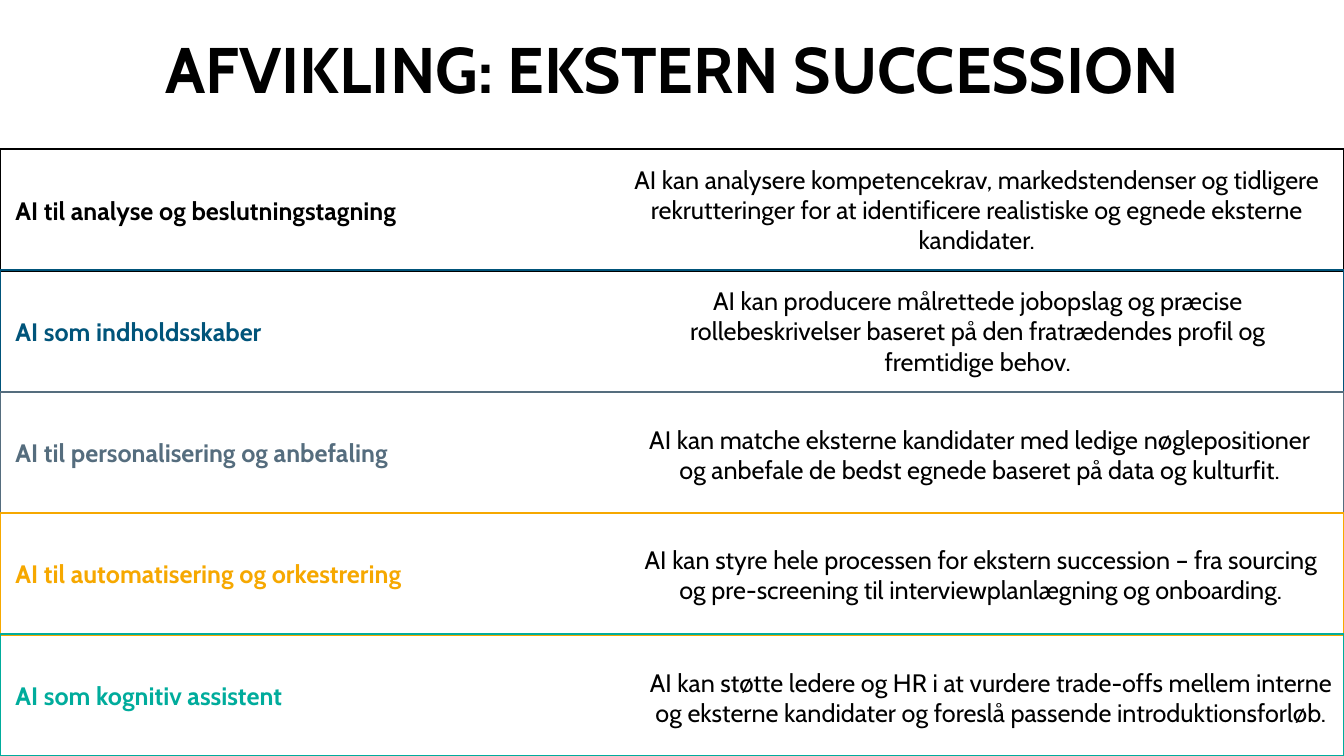
from pptx import Presentation
from pptx.dml.color import RGBColor
from pptx.enum.shapes import MSO_SHAPE as Geo
from pptx.enum.text import MSO_ANCHOR as Anchor, PP_ALIGN as Align
from pptx.util import Pt

WIDE, HIGH = 960, 540
TOP, STEP, TALL = 106.5, 86.6, 87

# Colour, label, text, left and drop of the text within its row
ROWS = [
    ("000000", "AI til analyse og beslutningstagning",
     "AI kan analysere kompetencekrav, markedstendenser og tidligere "
     "rekrutteringer for at identificere realistiske og egnede eksterne "
     "kandidater.", 445.7, 0),
    ("00547A", "AI som indholdsskaber",
     "AI kan producere målrettede jobopslag og præcise rollebeskrivelser "
     "baseret på den fratrædendes profil og fremtidige behov.", 446.4, 0),
    ("556D7E", "AI til personalisering og anbefaling",
     "AI kan matche eksterne kandidater med ledige nøglepositioner og "
     "anbefale de bedst egnede baseret på data og kulturfit.", 447.8, 1.8),
    ("F6A800", "AI til automatisering og orkestrering",
     "AI kan styre hele processen for ekstern succession – fra sourcing og "
     "pre-screening til interviewplanlægning og onboarding.", 448.6, 1),
    ("00AC9C", "AI som kognitiv assistent",
     "AI kan støtte ledere og HR i at vurdere trade-offs mellem interne og "
     "eksterne kandidater og foreslå passende introduktionsforløb.",
     455.8, 2.1),
]


def paint(code):
    return RGBColor.from_string(code)


class Page:
    face = "Cabin"
    ink = "000000"
    size = 18

    def __init__(self, deck):
        self.slide = deck.slides.add_slide(deck.slide_layouts[6])

    def label(self, shape, words, size, color, bold, align):
        frame = shape.text_frame
        frame.word_wrap = True
        frame.vertical_anchor = Anchor.MIDDLE
        para = frame.paragraphs[0]
        para.text = words
        para.alignment = align
        font = para.font
        font.name, font.size, font.bold = self.face, Pt(size), bold
        font.color.rgb = paint(color)

    def text(self, words, x, y, w, h, size=size, bold=False):
        box = self.slide.shapes.add_textbox(Pt(x), Pt(y), Pt(w), Pt(h))
        self.label(box, words, size, self.ink, bold, Align.CENTER)

    def band(self, words, y, color):
        box = self.slide.shapes.add_shape(
            Geo.RECTANGLE, Pt(0), Pt(y), Pt(WIDE), Pt(TALL))
        box.shadow.inherit = False
        box.fill.background()
        box.line.color.rgb = paint(color)
        box.line.width = Pt(1.5)
        box.text_frame.margin_left = Pt(11)
        self.label(box, words, self.size, color, True, Align.LEFT)


def main():
    deck = Presentation()
    deck.slide_width, deck.slide_height = Pt(WIDE), Pt(HIGH)
    page = Page(deck)

    # Outlined bands with their labels
    for i, (color, name, *_) in enumerate(ROWS):
        page.band(name, TOP + i * STEP, color)

    # Title
    page.text("AFVIKLING: EKSTERN SUCCESSION", 0, 0, WIDE, 96.5, 46, True)

    # Text of each band
    for i, (_, _, words, left, drop) in enumerate(ROWS):
        page.text(words, left, TOP + i * STEP + drop, 504, 86.4)

    deck.save("out.pptx")


if __name__ == "__main__":
    main()
